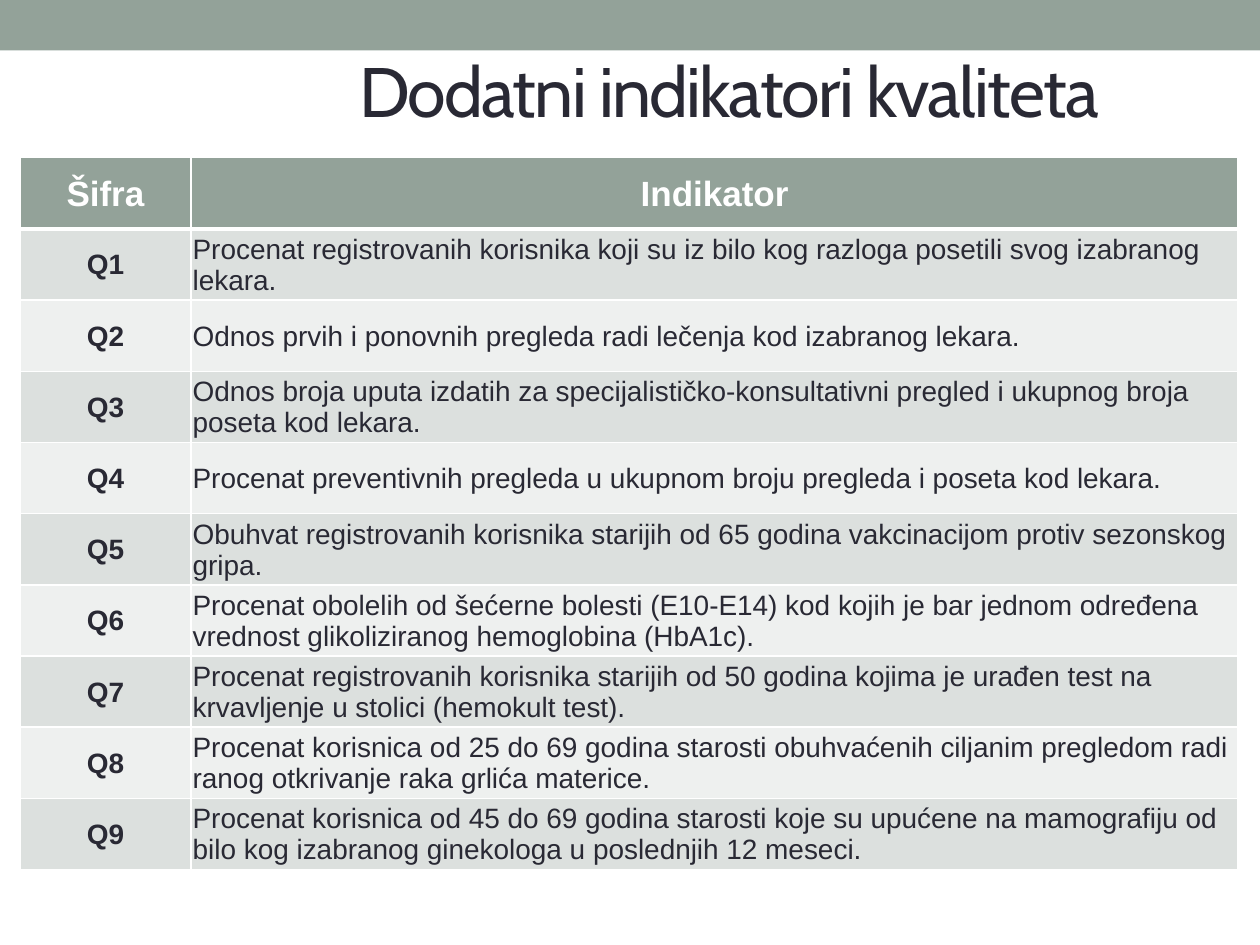
"""Build a slide with a table of additional quality indicators."""
from dataclasses import dataclass

from lxml.etree import SubElement
from pptx import Presentation
from pptx.dml.color import RGBColor
from pptx.enum.shapes import MSO_SHAPE
from pptx.enum.text import MSO_ANCHOR, MSO_AUTO_SIZE, PP_ALIGN
from pptx.oxml.ns import qn
from pptx.util import Cm, Pt


@dataclass(frozen=True)
class Theme:
    accent: str = "93A299"
    ink: str = "292934"
    white: str = "FFFFFF"
    bands: tuple = ("DCE0DE", "EEF0EF")
    title_font: str = "Cabin"
    body_font: str = "Arial"
    title_size: int = 40
    header_size: int = 20
    body_size: int = 16


theme = Theme()


def add_text(para, text, font, size, color, bold=False):
    span = para.add_run()
    span.text = text
    span.font.name = font
    span.font.size = Pt(size)
    span.font.bold = bold
    span.font.color.rgb = RGBColor.from_string(color)
    return span


def add_borders(cell, bottom_width):
    properties = cell._tc.get_or_add_tcPr()
    widths = {"a:lnL": 1, "a:lnR": 1, "a:lnT": 1, "a:lnB": bottom_width}
    for side, width in widths.items():
        line = SubElement(properties, qn(side), w=str(Pt(width)))
        fill = SubElement(line, qn("a:solidFill"))
        SubElement(fill, qn("a:srgbClr"), val=theme.white)


rows = [
    ("Šifra", "Indikator"),
    ("Q1", "Procenat registrovanih korisnika koji su iz bilo kog razloga posetili svog izabranog lekara."),
    ("Q2", "Odnos prvih i ponovnih pregleda radi lečenja kod izabranog lekara."),
    ("Q3", "Odnos broja uputa izdatih za specijalističko-konsultativni pregled i ukupnog broja poseta kod lekara."),
    ("Q4", "Procenat preventivnih pregleda u ukupnom broju pregleda i poseta kod lekara."),
    ("Q5", "Obuhvat registrovanih korisnika starijih od 65 godina vakcinacijom protiv sezonskog gripa."),
    ("Q6", "Procenat obolelih od šećerne bolesti (E10-E14) kod kojih je bar jednom određena "
           "vrednost glikoliziranog hemoglobina (HbA1c)."),
    ("Q7", "Procenat registrovanih korisnika starijih od 50 godina kojima je urađen test na "
           "krvavljenje u stolici (hemokult test)."),
    ("Q8", "Procenat korisnica od 25 do 69 godina starosti obuhvaćenih ciljanim pregledom radi "
           "ranog otkrivanje raka grlića materice."),
    ("Q9", "Procenat korisnica od 45 do 69 godina starosti koje su upućene na mamografiju od "
           "bilo kog izabranog ginekologa u poslednjih 12 meseci."),
]

deck = Presentation()
deck.slide_width = Cm(25.4)
deck.slide_height = Cm(19.05)
page = deck.slides.add_slide(deck.slide_layouts[5])

band = page.shapes.add_shape(MSO_SHAPE.RECTANGLE, 0, 0, deck.slide_width, Cm(1.02))
band.shadow.inherit = False
band.fill.solid()
band.fill.fore_color.rgb = RGBColor.from_string(theme.accent)
band.line.fill.background()

title = page.shapes.title
title.left, title.top, title.width, title.height = Cm(6.99), Cm(0.64), Cm(18.41), Cm(2.34)
frame = title.text_frame
frame.word_wrap = True
frame.auto_size = MSO_AUTO_SIZE.NONE
frame.vertical_anchor = MSO_ANCHOR.MIDDLE
para = frame.paragraphs[0]
para.alignment = PP_ALIGN.LEFT
span = add_text(para, "Dodatni indikatori kvaliteta", theme.title_font, theme.title_size, theme.ink)
span.font._element.set("spc", "-100")

column_widths = (Cm(1.36 * 2.54), Cm(8.31 * 2.54))
table_height = Cm(14.35)
table = page.shapes.add_table(
    len(rows), len(column_widths), Cm(0.4), Cm(3.18), sum(column_widths), table_height
).table
for column, width in zip(table.columns, column_widths):
    column.width = width

for row_index, texts in enumerate(rows):
    is_header = row_index == 0
    table.rows[row_index].height = table_height // len(rows)
    fill_color = theme.accent if is_header else theme.bands[(row_index - 1) % 2]
    text_color = theme.white if is_header else theme.ink
    size = theme.header_size if is_header else theme.body_size
    for column_index, text in enumerate(texts):
        is_label = is_header or column_index == 0
        cell = table.cell(row_index, column_index)
        add_borders(cell, 3 if is_header else 1)
        cell.fill.solid()
        cell.fill.fore_color.rgb = RGBColor.from_string(fill_color)
        cell.vertical_anchor = MSO_ANCHOR.MIDDLE
        cell.margin_left = cell.margin_right = cell.margin_top = Cm(0.03)
        cell.margin_bottom = 0
        para = cell.text_frame.paragraphs[0]
        para.alignment = PP_ALIGN.CENTER if is_label else PP_ALIGN.LEFT
        add_text(para, text, theme.body_font, size, text_color, is_label)

deck.save("out.pptx")
